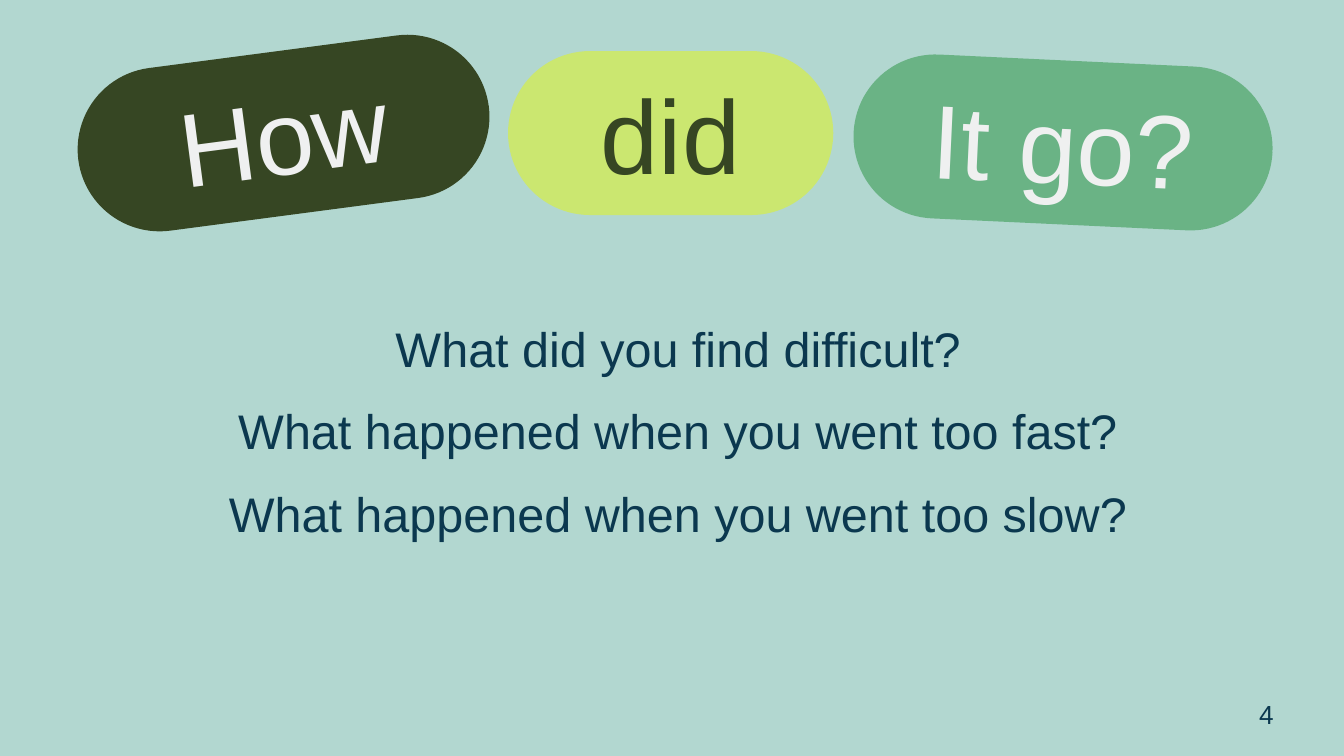
"""Build the "How did It go?" reflection slide."""
import pptx
import pptx.dml.color
import pptx.enum.shapes
import pptx.enum.text
import pptx.util

Inches = pptx.util.Inches
Pt = pptx.util.Pt
ALIGN = pptx.enum.text.PP_ALIGN
ANCHOR = pptx.enum.text.MSO_ANCHOR

COLORS = {
    "background": "B2D7D0",
    "navy": "0B384F",
    "olive": "364623",
    "lime": "CBE770",
    "green": "6AB385",
    "white": "EFF0F0",
}


def color(name):
    return pptx.dml.color.RGBColor.from_string(COLORS[name])


def format_text(shape, size, color_name, align, anchor):
    frame = shape.text_frame
    frame.word_wrap = True
    frame.auto_size = pptx.enum.text.MSO_AUTO_SIZE.NONE
    frame.vertical_anchor = anchor
    frame.margin_left = frame.margin_right = Inches(0.1)
    frame.margin_top = frame.margin_bottom = Inches(0.1)
    for paragraph in frame.paragraphs:
        paragraph.alignment = align
        for span in paragraph.runs:
            span.font.name = "Arial"
            span.font.size = Pt(size)
            span.font.color.rgb = color(color_name)


deck = pptx.Presentation()
deck.slide_width = Inches(10)
deck.slide_height = Inches(10 * 9 / 16)
page = deck.slides.add_slide(deck.slide_layouts[0])
page.background.fill.solid()
page.background.fill.fore_color.rgb = color("background")

title = page.shapes.title
title.element.getparent().remove(title.element)

questions = page.placeholders[1]
questions.left, questions.top = Inches(1.42), Inches(2.27)
questions.width, questions.height = Inches(7.26), Inches(2.36)
questions.text_frame.text = "\n".join([
    "What did you find difficult?",
    "What happened when you went too fast?",
    "What happened when you went too slow?",
])
format_text(questions, 26, "navy", ALIGN.CENTER, ANCHOR.TOP)
for paragraph in questions.text_frame.paragraphs:
    paragraph.line_spacing = 1.0
    paragraph.space_before = Pt(0)
    paragraph.space_after = Pt(13)

number = page.shapes.add_textbox(Inches(9.27), Inches(5.1), Inches(0.6), Inches(0.43))
number.text_frame.text = "4"
format_text(number, 14, "navy", ALIGN.LEFT, ANCHOR.MIDDLE)

pills = [
    ("did", 3.78, 0.38, 2.42, 0, "lime", "olive"),
    ("It go?", 6.35, 0.45, 3.12, 2.7, "green", "white"),
    ("How", 0.57, 0.38, 3.08, 352.5, "olive", "white"),
]
for word, left, top, width, rotation, fill, ink in pills:
    pill = page.shapes.add_shape(
        pptx.enum.shapes.MSO_SHAPE.ROUNDED_RECTANGLE,
        Inches(left), Inches(top), Inches(width), Inches(1.22))
    pill.adjustments[0] = 0.5
    pill.rotation = rotation
    pill.shadow.inherit = False
    pill.fill.solid()
    pill.fill.fore_color.rgb = color(fill)
    pill.line.fill.background()
    pill.text_frame.text = word
    format_text(pill, 56, ink, ALIGN.CENTER, ANCHOR.MIDDLE)

deck.save("out.pptx")
